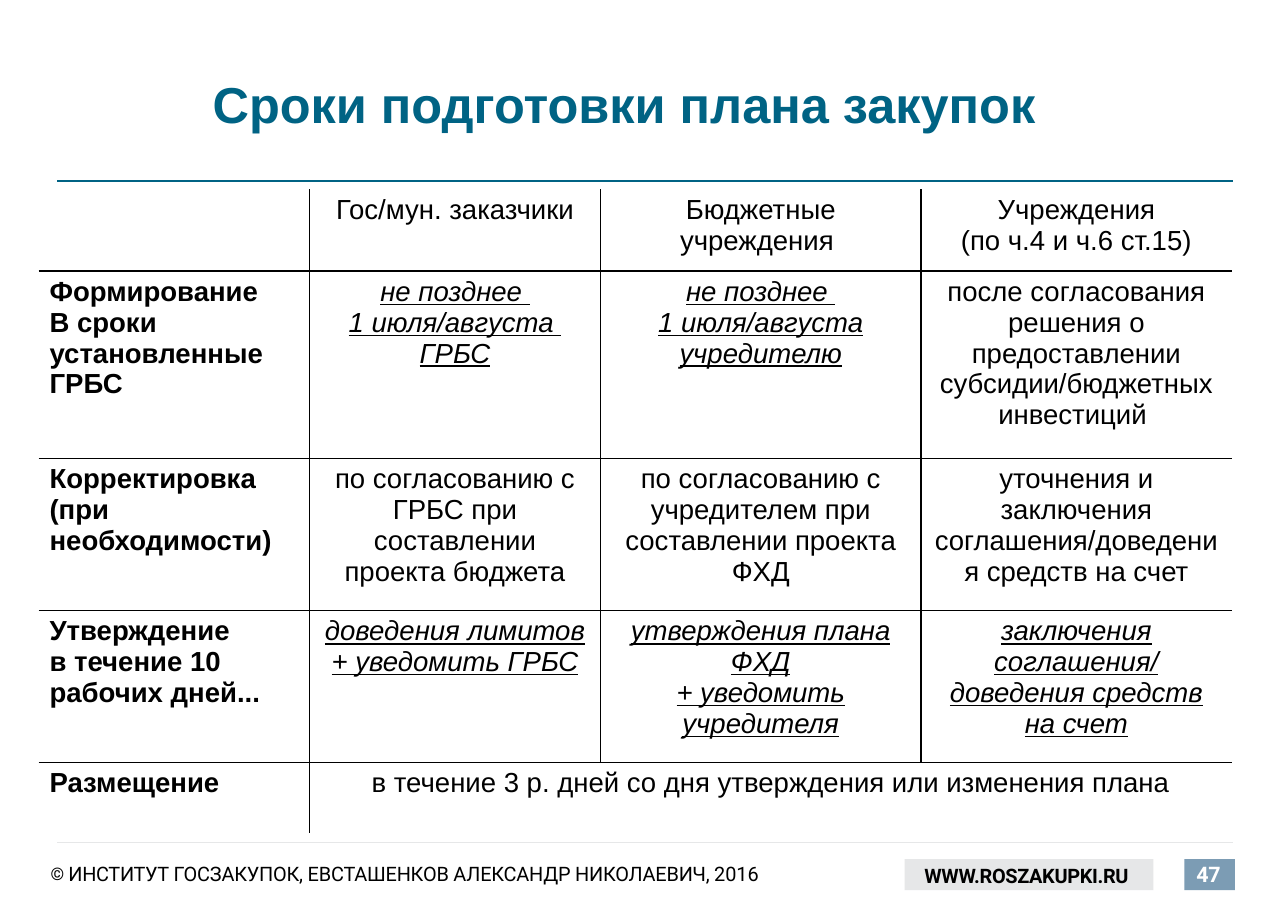
"""Build the slide on deadlines for preparing a procurement plan."""
import pptx
import pptx.util
import pptx.dml.color
import pptx.enum.shapes
import pptx.enum.text
import pptx.oxml
import pptx.oxml.ns
import lxml.etree

Inches = pptx.util.Inches
Pt = pptx.util.Pt
RGBColor = pptx.dml.color.RGBColor
ALIGN = pptx.enum.text.PP_ALIGN
MIDDLE = pptx.enum.text.MSO_ANCHOR.MIDDLE

TEAL = RGBColor(0x00, 0x63, 0x84)
STEEL = RGBColor(0x7C, 0x9C, 0xB4)
PALE = RGBColor(0xE6, 0xE7, 0xE8)
BLACK = RGBColor(0x00, 0x00, 0x00)
WHITE = RGBColor(0xFF, 0xFF, 0xFF)


def write(paragraph, text, font="Arial", size=18, color=BLACK, bold=False,
          italic=False, underline=False, align=ALIGN.LEFT, tracking=0, baseline=0):
    paragraph.alignment = align
    run = paragraph.add_run()
    run.text = text
    run.font.name = font
    run.font.size = Pt(size)
    run.font.color.rgb = color
    run.font.bold = bold
    run.font.italic = italic
    run.font.underline = underline
    properties = run._r.get_or_add_rPr()
    if tracking:
        properties.set("spc", str(tracking))
    if baseline:
        properties.set("baseline", str(baseline))


deck = pptx.Presentation()
deck.slide_width = Inches(11.69)
deck.slide_height = Inches(8.27)
slide = deck.slides.add_slide(deck.slide_layouts[5])
shapes = slide.shapes

for left, width, color in [(8.21, 2.26, PALE), (10.75, 0.46, STEEL)]:
    panel = shapes.add_shape(pptx.enum.shapes.MSO_SHAPE.RECTANGLE,
                             Inches(left), Inches(7.8), Inches(width), Inches(0.28))
    panel.shadow.inherit = False
    panel.fill.solid()
    panel.fill.fore_color.rgb = color
    panel.line.fill.background()

for top, color, weight in [(7.65, PALE, 0.85), (1.64, TEAL, 1.42)]:
    rule = shapes.add_connector(pptx.enum.shapes.MSO_CONNECTOR.STRAIGHT,
                                Inches(0.52), Inches(top), Inches(11.19), Inches(top))
    rule.line.color.rgb = color
    rule.line.width = Pt(weight)
    lxml.etree.SubElement(rule._element.spPr, pptx.oxml.ns.qn("a:effectLst"))

title = shapes.title
title.left, title.top = Inches(1.93), Inches(0.65)
title.width, title.height = Inches(9.29), Inches(0.57)
heading = title.text_frame
heading.auto_size = pptx.enum.text.MSO_AUTO_SIZE.NONE
heading.vertical_anchor = MIDDLE
heading.margin_left = heading.margin_right = 0
heading.margin_top = heading.margin_bottom = 0
write(heading.paragraphs[0], "Сроки подготовки плана закупок", size=33, color=TEAL, bold=True)

site = [("WWW.ROSZAKUPKI.RU", dict(size=13, bold=True, tracking=-20))]
page_number = [("47", dict(size=14, bold=True, color=WHITE, align=ALIGN.CENTER, tracking=-20))]
copyright_line = [
    ("© ", dict(size=19.5, baseline=4000)),
    ("ИНСТИТУТ ", dict(size=13, tracking=-20)),
    ("ГОСЗАКУПОК, ЕВСТАШЕНКОВ АЛЕКСАНДР НИКОЛАЕВИЧ, ", dict(size=13, tracking=-10)),
    ("2016", dict(size=13)),
]
for left, top, width, height, indent, spacing, runs in [
    (8.09, 7.74, 2.68, 0.42, 0.3, None, site),
    (10.72, 7.72, 0.5, 0.43, 0, None, page_number),
    (0.45, 7.75, 6.83, 0.41, 0.01, Pt(14.8), copyright_line),
]:
    footer = shapes.add_textbox(Inches(left), Inches(top), Inches(width), Inches(height)).text_frame
    footer.word_wrap = True
    footer.vertical_anchor = MIDDLE
    footer.margin_left, footer.margin_right = Inches(indent), 0
    footer.margin_top = footer.margin_bottom = Inches(0.1)
    footer.paragraphs[0].line_spacing = spacing
    for text, style in runs:
        write(footer.paragraphs[0], text, font="Roboto", **style)

column_widths = [2.46, 2.64, 2.91, 2.82]
row_heights = [0.74, 1.7, 1.38, 1.38, 0.64]
deadlines = [
    ["", "Гос/мун. заказчики", "Бюджетные учреждения ", "Учреждения\n(по ч.4 и ч.6 ст.15)"],
    ["Формирование\nВ сроки установленные ГРБС",
     "не позднее \n1 июля/августа \nГРБС",
     "не позднее \n1 июля/августа учредителю",
     "после согласования решения о предоставлении субсидии/бюджетных инвестиций "],
    ["Корректировка\n(при необходимости)",
     "по согласованию с ГРБС при составлении проекта бюджета",
     "по согласованию с учредителем при составлении проекта ФХД",
     "уточнения и заключения соглашения/доведения средств на счет"],
    ["Утверждение\nв течение 10 рабочих дней...",
     "доведения лимитов\n+ уведомить ГРБС",
     "утверждения плана ФХД\n+ уведомить учредителя",
     "заключения соглашения/\nдоведения средств на счет"],
    ["Размещение", "в течение 3 р. дней со дня утверждения или изменения плана", "", ""],
]
emphasized = {(1, 1), (1, 2), (3, 1), (3, 2), (3, 3)}
last_row, last_column = len(row_heights) - 1, len(column_widths) - 1

schedule = shapes.add_table(len(row_heights), len(column_widths), Inches(0.35), Inches(1.72),
                            Inches(sum(column_widths)), Inches(sum(row_heights))).table
schedule.first_row = False
schedule.horz_banding = False
for column, width in zip(schedule.columns, column_widths):
    column.width = Inches(width)
for row, height in zip(schedule.rows, row_heights):
    row.height = Inches(height)
schedule.cell(last_row, 1).merge(schedule.cell(last_row, last_column))

for r, row_texts in enumerate(deadlines):
    for c, cell_text in enumerate(row_texts):
        cell = schedule.cell(r, c)
        cell.fill.background()
        merged = r == last_row
        edges = {
            "lnL": c > 0 and not (merged and c > 1),
            "lnR": c < last_column and not (merged and c > 0),
            "lnT": r > 0,
            "lnB": r < last_row,
        }
        for position, (edge, visible) in enumerate(edges.items()):
            paint = f'<a:solidFill><a:srgbClr val="{BLACK}"/></a:solidFill>' if visible else "<a:noFill/>"
            border = pptx.oxml.parse_xml(
                f'<a:{edge} {pptx.oxml.ns.nsdecls("a")} w="{Pt(1)}">{paint}</a:{edge}>')
            cell._tc.get_or_add_tcPr().insert(position, border)
        if not cell_text:
            continue
        marked = (r, c) in emphasized
        for n, line in enumerate(cell_text.split("\n")):
            paragraph = cell.text_frame.add_paragraph() if n else cell.text_frame.paragraphs[0]
            write(paragraph, line, bold=c == 0, italic=marked, underline=marked,
                  align=ALIGN.CENTER if c else ALIGN.LEFT)

deck.save("out.pptx")
